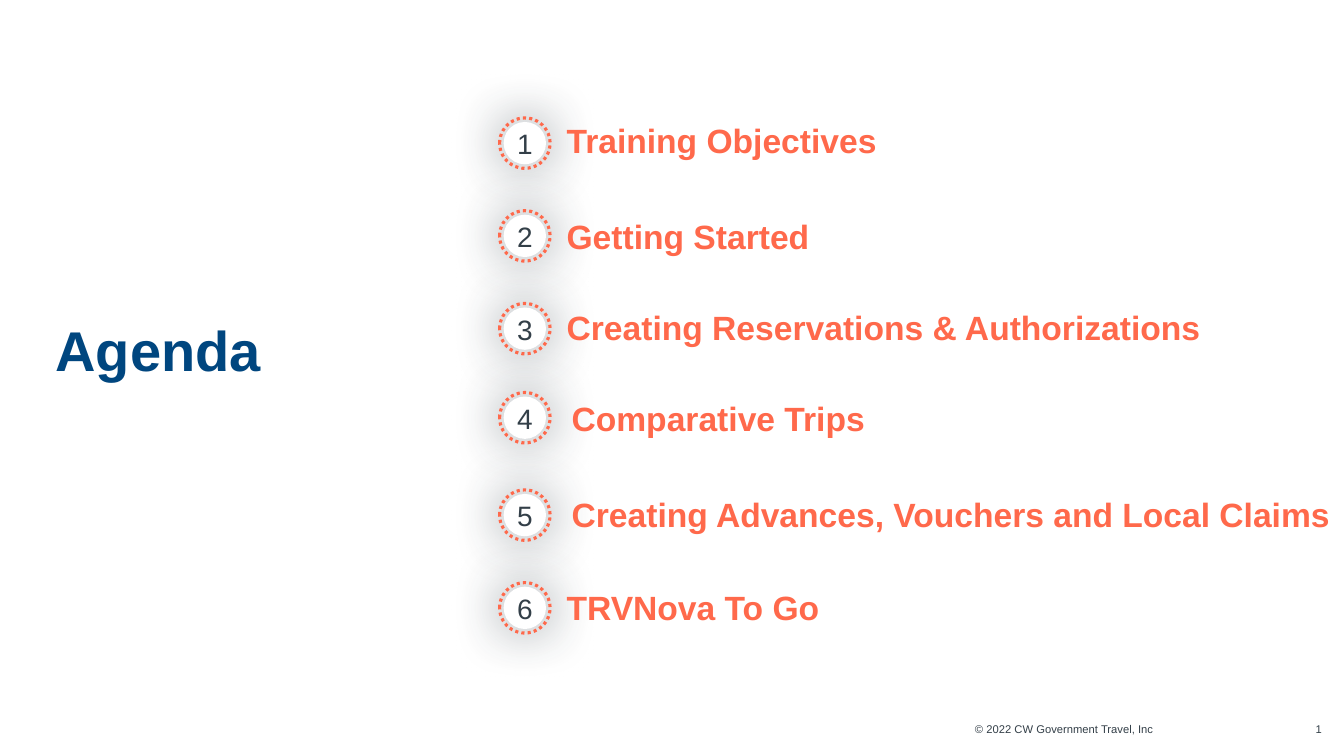
"""Build an agenda slide with six numbered topics."""
from dataclasses import dataclass

import lxml.etree
import pptx
import pptx.dml.color
import pptx.enum.dml
import pptx.enum.shapes
import pptx.enum.text
import pptx.oxml
import pptx.oxml.ns
import pptx.util

RGB = pptx.dml.color.RGBColor
ALIGN = pptx.enum.text.PP_ALIGN
FIT = pptx.enum.text.MSO_AUTO_SIZE
MIDDLE = pptx.enum.text.MSO_ANCHOR.MIDDLE
NAVY = RGB(0x00, 0x46, 0x7F)
CORAL = RGB(0xFF, 0x69, 0x4B)
SLATE = RGB(0x33, 0x3F, 0x48)
WHITE = RGB(0xFF, 0xFF, 0xFF)

WIDTH = pptx.util.Inches(13.33)
HEIGHT = pptx.util.Inches(7.5)
FIRST_ROW, ROW_PITCH = 18.93, 12.27
BADGE_X, RING, DISC = 39.05, 6.67, 5.6
TIGHT, FULL = 3.6, 5.33


@dataclass(frozen=True)
class Box:
    left: float
    top: float
    width: float
    height: float

    def emu(self) -> tuple[int, int, int, int]:
        return across(self.left), down(self.top), across(self.width), down(self.height)


@dataclass(frozen=True)
class Topic:
    text: str
    badge_row: float
    label_row: float
    left: float
    width: float
    height: float = TIGHT


TOPICS = [
    Topic("Training Objectives", 0, 0.03, 42.16, 33.08),
    Topic("Getting Started", 1, 1, 42.16, 28.88, FULL),
    Topic("Creating Reservations & Authorizations", 2, 2.04, 42.16, 48.46),
    Topic("Comparative Trips", 2.96, 3.02, 42.53, 48.46),
    Topic("Creating Advances, Vouchers and Local Claims", 4.01, 4.06, 42.53, 57.46),
    Topic("TRVNova To Go", 5.01, 5, 42.16, 33.08, FULL),
]


def across(share: float) -> int:
    return round(WIDTH * share / 100)


def down(share: float) -> int:
    return round(HEIGHT * share / 100)


def row_centre(row: float) -> float:
    return FIRST_ROW + ROW_PITCH * row


def write(tf, text: str, size: float, color, align=ALIGN.LEFT, bold: bool = False) -> None:
    tf.text = text
    p = tf.paragraphs[0]
    p.alignment = align
    font = p.runs[0].font
    font.name, font.size, font.bold = "Arial", pptx.util.Pt(size), bold
    font.color.rgb = color


def clear_insets(tf) -> None:
    tf.margin_left = tf.margin_top = tf.margin_right = tf.margin_bottom = 0
    tf.word_wrap = True


def add_text(shapes, box: Box):
    tf = shapes.add_textbox(*box.emu()).text_frame
    clear_insets(tf)
    return tf


def add_circle(shapes, row: float, size: float):
    side = down(size)
    left = across(BADGE_X) - side // 2
    top = down(row_centre(row)) - side // 2
    sp = shapes.add_shape(pptx.enum.shapes.MSO_SHAPE.OVAL, left, top, side, side)
    sp.shadow.inherit = False
    return sp


def add_glow(sp) -> None:
    effects = sp._element.spPr.find(pptx.oxml.ns.qn("a:effectLst"))
    effects.append(pptx.oxml.parse_xml(
        f'<a:outerShdw {pptx.oxml.ns.nsdecls("a")} blurRad="{pptx.util.Pt(40)}" dist="0" '
        f'algn="ctr" rotWithShape="0"><a:srgbClr val="{SLATE}">'
        '<a:alpha val="70000"/></a:srgbClr></a:outerShdw>'))


def add_badge(s, number: int, row: float) -> None:
    shapes = s.shapes.add_group_shape().shapes
    disc = add_circle(shapes, row, DISC)
    disc.fill.solid()
    disc.fill.fore_color.rgb = WHITE
    disc.line.fill.background()
    add_glow(disc)

    ring = add_circle(shapes, row, RING)
    ring.fill.background()
    ring.line.color.rgb = CORAL
    ring.line.width = pptx.util.Pt(2.25)
    ring.line.dash_style = pptx.enum.dml.MSO_LINE.ROUND_DOT

    box = Box(BADGE_X - 1.35, row_centre(row) - 2.8, 2.7, 5.87)
    tf = shapes.add_textbox(*box.emu()).text_frame
    tf.word_wrap = False
    tf.auto_size = FIT.SHAPE_TO_FIT_TEXT
    write(tf, str(number), 20, SLATE, ALIGN.CENTER)


def add_label(s, topic: Topic) -> None:
    top = row_centre(topic.label_row) - topic.height / 2
    tf = add_text(s.shapes, Box(topic.left, top, topic.width, topic.height))
    tf.vertical_anchor = MIDDLE
    tf.auto_size = FIT.SHAPE_TO_FIT_TEXT
    write(tf, topic.text, 24, CORAL, bold=True)
    if topic.height == TIGHT:
        tf.paragraphs[0].line_spacing = 0.65


def add_title(s) -> None:
    sp = s.shapes.title
    sp.left, sp.top, sp.width, sp.height = Box(4.13, 9.47, 26.26, 73.33).emu()
    tf = sp.text_frame
    clear_insets(tf)
    tf.vertical_anchor = MIDDLE
    tf.auto_size = FIT.NONE
    write(tf, "Agenda", 40, NAVY, bold=True)


def add_footer(s) -> None:
    tf = add_text(s.shapes, Box(62.87, 95.6, 33, 1.87))
    tf.margin_right = across(10.05)
    write(tf, "© 2022 CW Government Travel, Inc", 8, SLATE, ALIGN.RIGHT)
    tf = add_text(s.shapes, Box(96.62, 95.6, 1.73, 1.87))
    write(tf, "1", 8, SLATE, ALIGN.RIGHT)


def main() -> None:
    prs = pptx.Presentation()
    prs.slide_width, prs.slide_height = WIDTH, HEIGHT
    s = prs.slides.add_slide(prs.slide_layouts.get_by_name("Title Only"))
    add_title(s)
    add_footer(s)
    for number, topic in enumerate(TOPICS, 1):
        add_badge(s, number, topic.badge_row)
        add_label(s, topic)
    prs.save("out.pptx")


if __name__ == "__main__":
    main()
